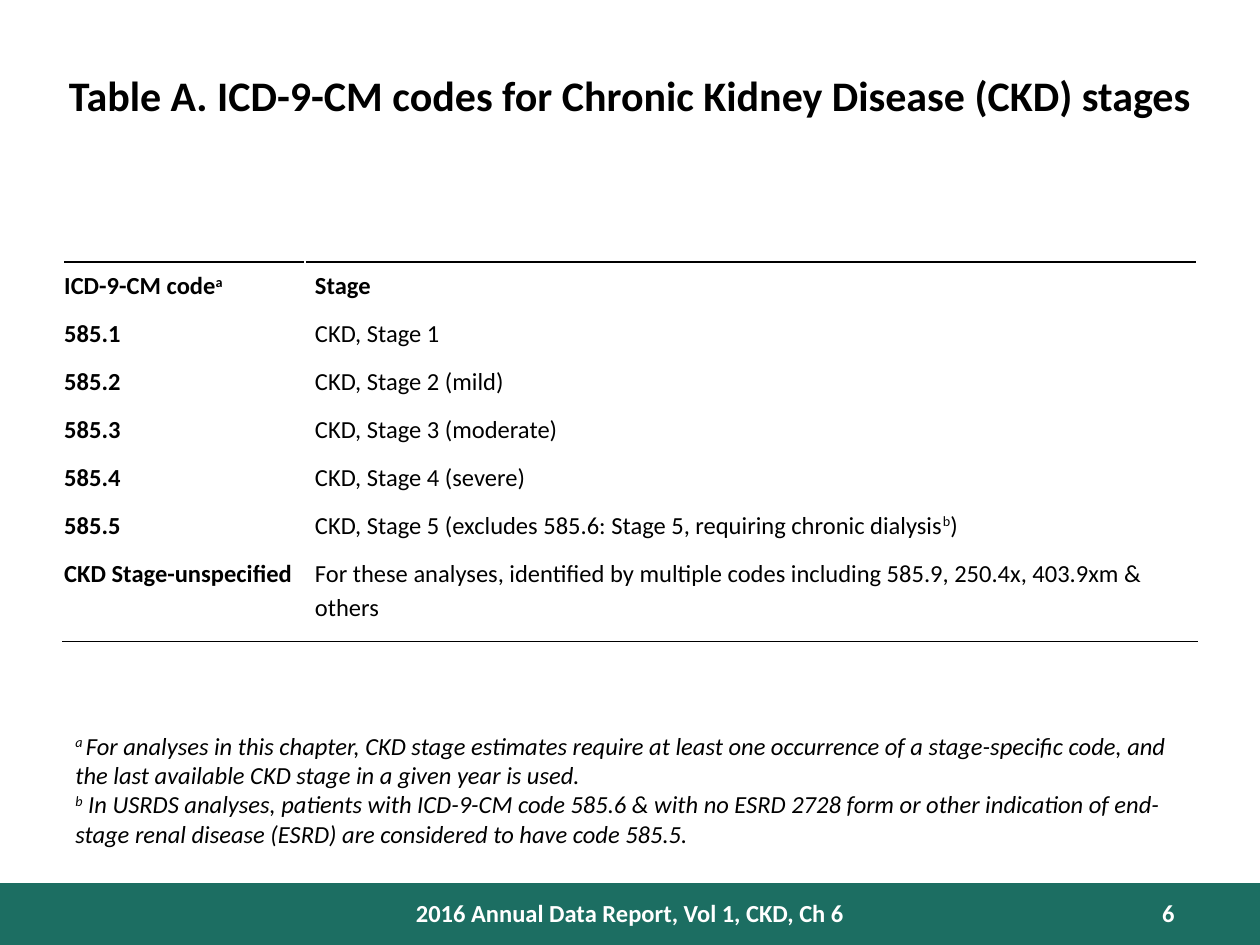
from dataclasses import dataclass

from lxml import etree
from pptx import Presentation
from pptx import util as u
from pptx.dml.color import RGBColor
from pptx.enum import shapes, text
from pptx.oxml.ns import qn

COLORS = {"ink": "000000", "paper": "FFFFFF", "band": "1C6E62"}
ALIGN = text.PP_ALIGN


@dataclass
class Span:
    words: str
    raised: bool = False


@dataclass
class Label:
    area: tuple[float, float, float, float]
    paragraphs: list[list[Span]]
    style: dict
    color: str = "ink"
    align: ALIGN = ALIGN.LEFT


def color_of(name: str) -> RGBColor:
    return RGBColor.from_string(COLORS[name])


def write(para, spans: list[Span], style: dict, color: str) -> None:
    for item in spans:
        span = para.add_run()
        span.text = item.words
        for key, value in {"name": "Calibri", "size": u.Pt(14), **style}.items():
            setattr(span.font, key, value)
        span.font.color.rgb = color_of(color)
        if item.raised:
            span._r.get_or_add_rPr().set("baseline", "30000")


def draw_label(page, label: Label) -> None:
    box = page.shapes.add_textbox(*map(u.Inches, label.area))
    frame = box.text_frame
    frame.word_wrap = True
    for index, spans in enumerate(label.paragraphs):
        para = frame.add_paragraph() if index else frame.paragraphs[0]
        para.alignment = label.align
        write(para, spans, label.style, label.color)


def set_borders(cell, sides: dict[str, tuple[str, float]]) -> None:
    properties = cell._tc.get_or_add_tcPr()
    for index, (side, (color, width)) in enumerate(sides.items()):
        line = etree.Element(qn(f"a:ln{side}"), w=str(u.Pt(width)))
        fill = etree.SubElement(line, qn("a:solidFill"))
        etree.SubElement(fill, qn("a:srgbClr"), val=COLORS[color])
        properties.insert(index, line)


def draw_table(page, rows: list[tuple[list[Span], list[Span]]]) -> None:
    heights = [0.38] * (len(rows) - 1) + [0.73]
    frame = page.shapes.add_table(len(rows), 2, *map(u.Inches, (0.5, 2.08, 9, sum(heights))))
    table = frame.table
    table.horz_banding = False
    for column, width in zip(table.columns, (1.92, 7.08)):
        column.width = u.Inches(width)
    last = len(rows) - 1
    for r, (row, height) in enumerate(zip(rows, heights)):
        table.rows[r].height = u.Inches(height)
        for c, spans in enumerate(row):
            cell = table.cell(r, c)
            margins = {"left": 0.08 if c else 0.01, "top": 0.04, "right": 0.08, "bottom": 0}
            for side, size in margins.items():
                setattr(cell, f"margin_{side}", u.Inches(size))
            cell.fill.background()
            # Only the outer top and bottom rules are dark
            header_rule = ("paper", 3)
            top = ("ink", 1) if r == 0 else header_rule if r == 1 else ("paper", 1)
            bottom = header_rule if r == 0 else ("ink", 1) if r == last else ("paper", 1)
            set_borders(cell, {"L": ("paper", 1), "R": ("paper", 1), "T": top, "B": bottom})
            para = cell.text_frame.paragraphs[0]
            para.line_spacing = 1.15
            para.space_after = u.Pt(10)
            write(para, spans, {"bold": r == 0 or c == 0}, "ink")


STAGES = [
    ([Span("ICD-9-CM code"), Span("a", True)], [Span("Stage")]),
    ([Span("585.1")], [Span("CKD, Stage 1")]),
    ([Span("585.2")], [Span("CKD, Stage 2 (mild)")]),
    ([Span("585.3")], [Span("CKD, Stage 3 (moderate)")]),
    ([Span("585.4")], [Span("CKD, Stage 4 (severe)")]),
    ([Span("585.5")],
     [Span("CKD, Stage 5 (excludes 585.6: Stage 5, requiring chronic dialysis"),
      Span("b", True), Span(")")]),
    ([Span("CKD Stage-unspecified")],
     [Span("For these analyses, identified by multiple codes including "
           "585.9, 250.4x, 403.9xm & others")]),
]

FOOTNOTES = [
    [Span("a ", True),
     Span("For analyses in this chapter, CKD stage estimates require at least one occurrence "
          "of a stage-specific code, and the last available CKD stage in a given year is used.")],
    [Span("b", True),
     Span(" In USRDS analyses, patients with ICD-9-CM code 585.6 & with no ESRD 2728 form or "
          "other indication of end-stage renal disease (ESRD) are considered to have code 585.5.")],
]

LABELS = [
    Label((0.5, 5.75, 9, 1.04), FOOTNOTES, {"italic": True}),
    Label((0, 0.5, 10, 0.5),
          [[Span("Table A. ICD-9-CM codes for Chronic Kidney Disease (CKD) stages")]],
          {"size": u.Pt(24), "bold": True}, align=ALIGN.CENTER),
    Label((3, 7.08, 4, 0.33), [[Span("2016 Annual Data Report, Vol 1, CKD, Ch 6")]],
          {"bold": True}, "paper", ALIGN.CENTER),
    Label((8.42, 7.08, 1, 0.3), [[Span("6")]], {"bold": True}, "paper", ALIGN.RIGHT),
]


def main() -> None:
    deck = Presentation()
    deck.slide_width, deck.slide_height = u.Inches(10), u.Inches(7.5)
    page = deck.slides.add_slide(deck.slide_layouts[6])

    # Footer band
    band = page.shapes.add_shape(shapes.MSO_SHAPE.RECTANGLE,
                                 *map(u.Inches, (0, 7.01, 10, 0.5)))
    band.shadow.inherit = False
    band.fill.solid()
    band.fill.fore_color.rgb = color_of("band")
    band.line.fill.background()

    # Title, footnotes and footer text
    for label in LABELS:
        draw_label(page, label)

    # Code table
    draw_table(page, STAGES)
    deck.save("out.pptx")


if __name__ == "__main__":
    main()
